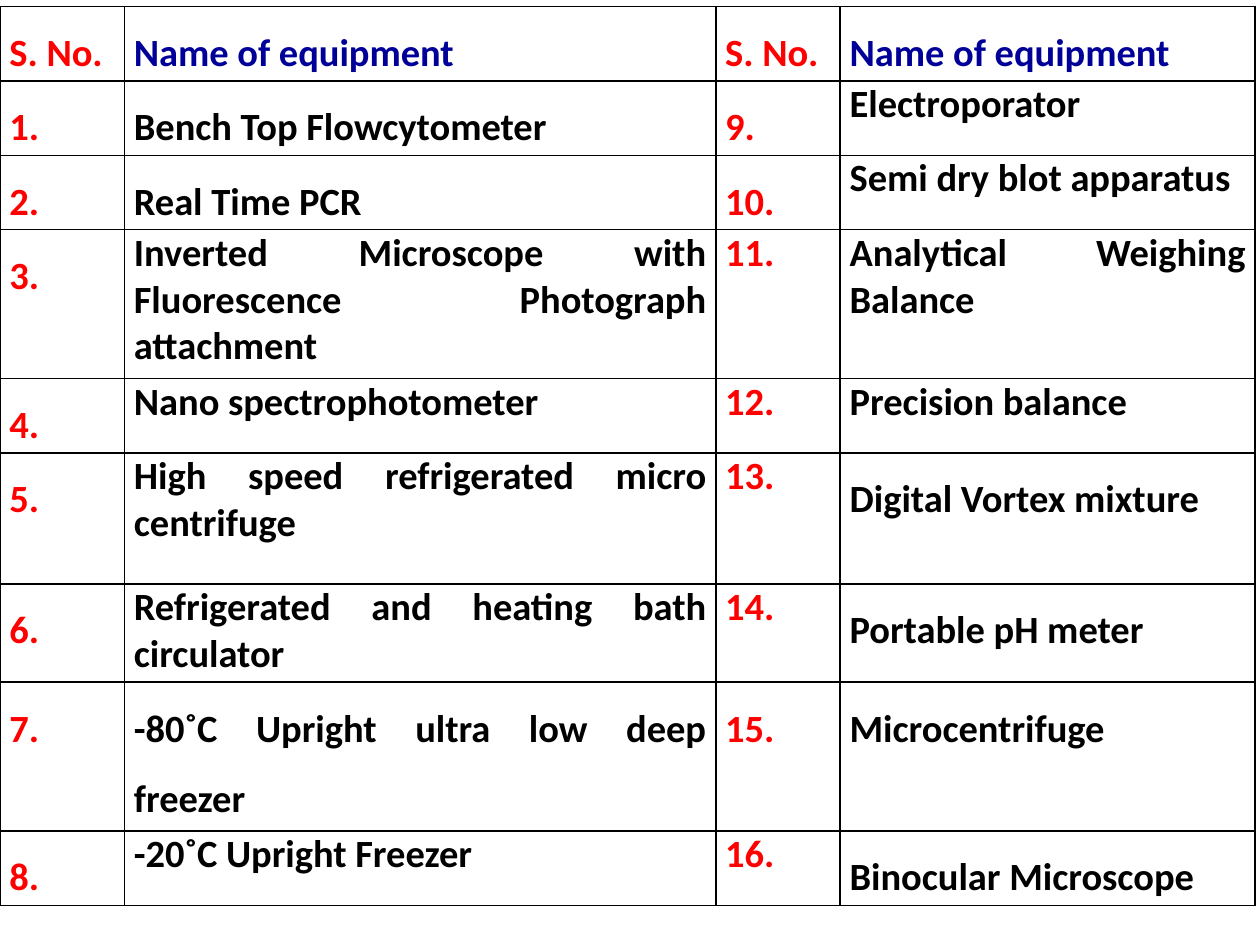
"""Build a slide with a two-column list of laboratory equipment."""
from lxml.etree import SubElement
from pptx import Presentation
from pptx.dml.color import RGBColor
from pptx.enum.text import PP_ALIGN as Align
from pptx.oxml.ns import qn
from pptx.util import Cm, Pt

RED = RGBColor(0xFF, 0, 0)
NAVY = RGBColor(0, 0, 0x99)
BLACK = RGBColor(0, 0, 0)
WHITE = RGBColor(0xFF, 0xFF, 0xFF)

HEAD = ("S. No.", "Name of equipment") * 2
LEFT = [
    "Bench Top Flowcytometer",
    "Real Time PCR",
    "Inverted Microscope with Fluorescence Photograph attachment",
    "Nano spectrophotometer",
    "High speed refrigerated micro centrifuge",
    "Refrigerated and heating bath circulator",
    "-80˚C Upright ultra low deep freezer",
    "-20˚C Upright Freezer",
]
RIGHT = [
    "Electroporator",
    "Semi dry blot apparatus",
    "Analytical Weighing Balance",
    "Precision balance",
    "Digital Vortex mixture",
    "Portable pH meter",
    "Microcentrifuge",
    "Binocular Microscope",
]
ALL = (1.5, 1.5, 1.5, 1.5)
TOP = (1.5, 1.5, 1.5, 1)
MID = (1.5, 1, 1, 1)
ENDS = (1.5, 1, 1, 1.5)
SPACE = [ALL, TOP, TOP, MID, MID, ENDS, ENDS, ALL, ENDS]
WIDTHS = [2.51, 11.92, 2.51, 8.36]
HEIGHTS = [1.5, 1.5, 1.5, 3, 1.5, 2.64, 1.98, 3, 1.5]


def write(cell, text, color=BLACK, space=1, size=22, font="Calibri"):
    cell.margin_left = cell.margin_right = Cm(0.19)
    cell.margin_top = cell.margin_bottom = 0
    para = cell.text_frame.paragraphs[0]
    para.alignment = Align.JUSTIFY
    para.line_spacing = float(space)
    run = para.add_run()
    run.text = text
    run.font.name = font
    run.font.size = Pt(size)
    run.font.bold = True
    run.font.color.rgb = color


def frame(cell):
    props = cell._tc.get_or_add_tcPr()
    for side in ("a:lnL", "a:lnR", "a:lnT", "a:lnB"):
        line = SubElement(props, qn(side), w=str(Pt(1)))
        fill = SubElement(line, qn("a:solidFill"))
        SubElement(fill, qn("a:srgbClr"), val=str(BLACK))
    cell.fill.solid()
    cell.fill.fore_color.rgb = WHITE


def main():
    deck = Presentation()
    deck.slide_width, deck.slide_height = Cm(25.4), Cm(19.05)
    slide = deck.slides.add_slide(deck.slide_layouts[6])

    count = len(LEFT)
    rows = [HEAD] + [
        (f"{n}.", left, f"{n + count}.", right)
        for n, (left, right) in enumerate(zip(LEFT, RIGHT), 1)
    ]
    table = slide.shapes.add_table(
        len(rows), len(WIDTHS), 0, Cm(0.13), Cm(sum(WIDTHS)), Cm(sum(HEIGHTS))
    ).table
    table.first_row = table.horz_banding = False
    for col, width in zip(table.columns, WIDTHS):
        col.width = Cm(width)
    for row, height in zip(table.rows, HEIGHTS):
        row.height = Cm(height)

    for r, (texts, spaces) in enumerate(zip(rows, SPACE)):
        name = BLACK if r else NAVY
        for c, (text, space) in enumerate(zip(texts, spaces)):
            cell = table.cell(r, c)
            write(cell, text, color=name if c % 2 else RED, space=space)
            frame(cell)

    deck.save("out.pptx")


if __name__ == "__main__":
    main()
